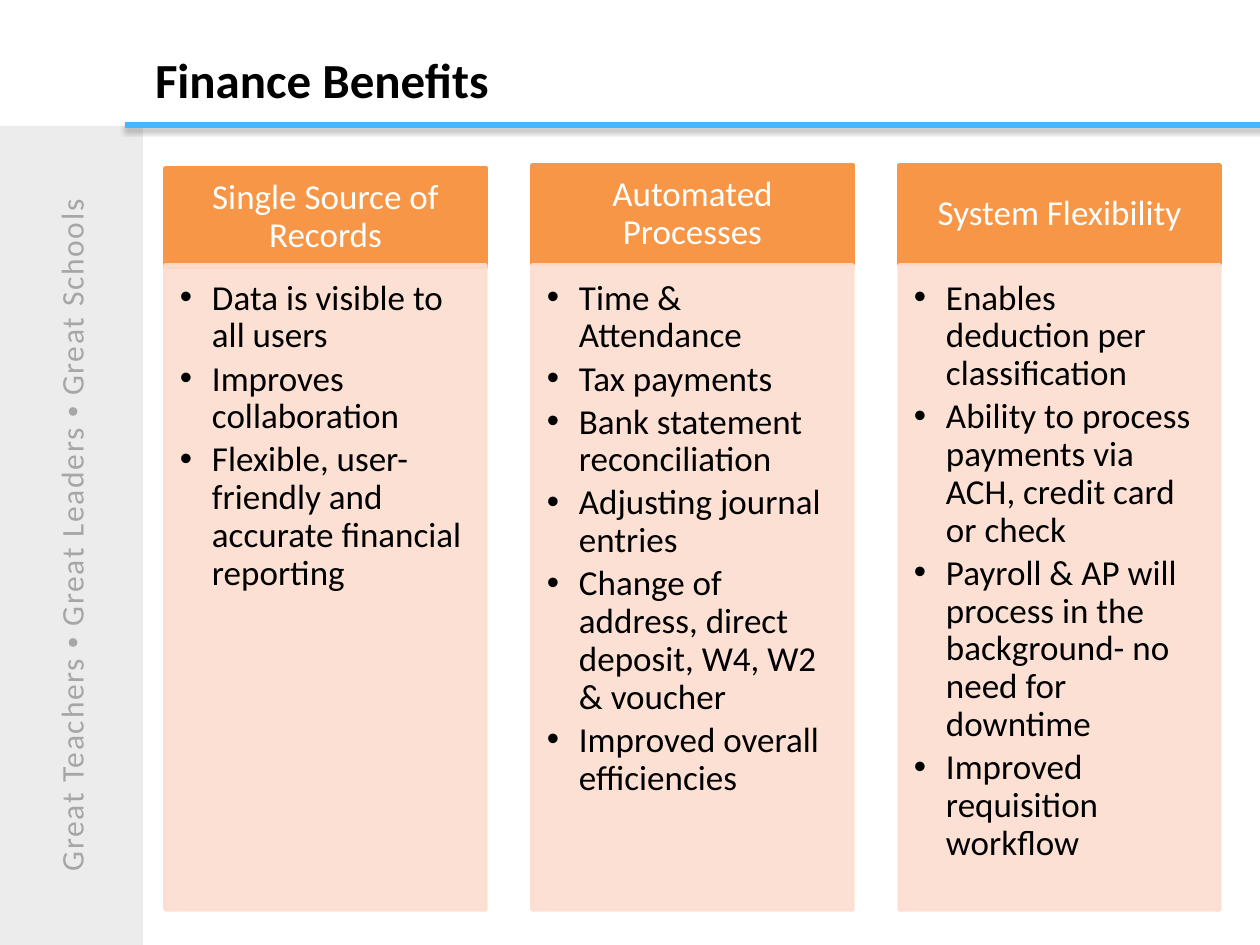
from dataclasses import dataclass

from lxml import etree
from pptx import Presentation
from pptx.dml.color import RGBColor
from pptx.enum.shapes import MSO_CONNECTOR, MSO_SHAPE
from pptx.enum.text import MSO_ANCHOR, PP_ALIGN
from pptx.oxml.ns import qn
from pptx.util import Pt

RECTANGLE = MSO_SHAPE.RECTANGLE
STRAIGHT = MSO_CONNECTOR.STRAIGHT
TOP, MIDDLE = MSO_ANCHOR.TOP, MSO_ANCHOR.MIDDLE
LEFT, CENTER = PP_ALIGN.LEFT, PP_ALIGN.CENTER

# Content
TITLE = "Finance Benefits"
MOTTO = ["Great Teachers ", "•", " Great Leaders ", "•", " Great Schools"]
COLUMNS = [
    ("Single Source of Records", [
        "Data is visible to all users",
        "Improves collaboration",
        "Flexible, user-friendly and accurate financial reporting",
    ]),
    ("Automated Processes", [
        "Time & Attendance",
        "Tax payments",
        "Bank statement reconciliation",
        "Adjusting journal entries",
        "Change of address, direct deposit, W4, W2 & voucher",
        "Improved overall efficiencies",
    ]),
    ("System Flexibility", [
        "Enables deduction per classification",
        "Ability to process payments via ACH, credit card or check",
        "Payroll & AP will process in the background- no need for downtime",
        "Improved requisition workflow",
    ]),
]


@dataclass(frozen=True)
class Theme:
    font: str = "Calibri"
    bullet_font: str = "Arial"
    text: str = "000000"
    header_text: str = "FFFFFF"
    header: str = "F79646"
    body: str = "FCDDCF"
    band: str = "D9D9D9"
    motto: str = "A6A6A6"
    rule: str = "49B4FF"
    title_size: int = 28
    text_size: int = 20
    motto_size: int = 18


THEME = Theme()

# Layout in px
PAGE_WIDTH, PAGE_HEIGHT = 1260, 945
RULE_LEFT, RULE_RIGHT, RULE_Y = 125, 1266, 125
COLUMN_LEFT, COLUMN_PITCH, COLUMN_WIDTH = 165, 367, 321
HEADER_TOPS = [168, 165, 165]
HEADER_HEIGHT = 99
BODY_TOP, BODY_HEIGHT = 265, 645
HEADER_INSETS = (20, 11, 20, 11)
BODY_INSETS = (15, 15, 20, 21)
BULLET_INDENT = 32


def px(value):
    return round(value * 914400 / 126)


def color(value):
    return RGBColor.from_string(value)


def add_child(parent, tag, **attributes):
    return etree.SubElement(parent, qn(tag), attributes)


def style(font, size, value, bold=False, name=THEME.font):
    font.name, font.size, font.bold = name, Pt(size), bold
    font.color.rgb = color(value)


def set_alpha(fill_parent, percent):
    for element in fill_parent.iter(qn("a:srgbClr")):
        add_child(element, "a:alpha", val=str(percent * 1000))


def add_panel(page, left, top, width, height, fill, line=None, alpha=None):
    panel = page.shapes.add_shape(RECTANGLE, px(left), px(top), px(width), px(height))
    panel.shadow.inherit = False
    panel.fill.solid()
    panel.fill.fore_color.rgb = color(fill)
    if line:
        panel.line.color.rgb = color(line)
        panel.line.width = Pt(2)
    else:
        panel.line.fill.background()
    if alpha:
        set_alpha(panel._element.spPr, alpha)
    return panel


def set_frame(shape, anchor, insets):
    frame = shape.text_frame
    frame.word_wrap = True
    frame.vertical_anchor = anchor
    (frame.margin_left, frame.margin_top,
     frame.margin_right, frame.margin_bottom) = map(px, insets)
    return frame


def add_bullet(para):
    properties = para._p.get_or_add_pPr()
    properties.set("marL", str(px(BULLET_INDENT)))
    properties.set("indent", str(-px(BULLET_INDENT)))
    add_child(properties, "a:buFont", typeface=THEME.bullet_font)
    add_child(properties, "a:buChar", char="•")


def add_column(page, left, header_top, heading, items):
    header = add_panel(page, left, header_top, COLUMN_WIDTH, HEADER_HEIGHT,
                       THEME.header, THEME.header)
    frame = set_frame(header, MIDDLE, HEADER_INSETS)
    frame.text = heading
    para = frame.paragraphs[0]
    para.alignment, para.line_spacing = CENTER, 0.9
    style(para.runs[0].font, THEME.text_size, THEME.header_text)

    body = add_panel(page, left, BODY_TOP, COLUMN_WIDTH, BODY_HEIGHT,
                     THEME.body, THEME.body, 90)
    frame = set_frame(body, TOP, BODY_INSETS)
    frame.text = "\n".join(items)
    for para in frame.paragraphs:
        para.alignment, para.line_spacing, para.space_after = LEFT, 0.9, Pt(3)
        add_bullet(para)
        style(para.runs[0].font, THEME.text_size, THEME.text)


def add_motto_band(page):
    band = add_panel(page, -1, 126, 144, 819, THEME.band, alpha=49)
    frame = set_frame(band, MIDDLE, (13, 6, 13, 6))
    frame._txBody.bodyPr.set("vert", "vert270")
    para = frame.paragraphs[0]
    para.alignment = CENTER
    for text in MOTTO:
        span = para.add_run()
        span.text = text
        name = THEME.bullet_font if text == "•" else THEME.font
        style(span.font, THEME.motto_size, THEME.motto, name=name)
        span._r.get_or_add_rPr().set("spc", "100")


def add_rule(page):
    rule = page.shapes.add_connector(STRAIGHT, px(RULE_RIGHT), px(RULE_Y),
                                     px(RULE_LEFT), px(RULE_Y))
    rule.line.color.rgb = color(THEME.rule)
    rule.line.width = Pt(3)
    effects = add_child(rule._element.spPr, "a:effectLst")
    shadow = add_child(effects, "a:outerShdw", blurRad=str(Pt(3.1)), dist=str(Pt(1.8)),
                       dir="5400000", rotWithShape="0")
    add_child(shadow, "a:srgbClr", val="000000")
    set_alpha(shadow, 35)


def add_title(page):
    box = page.shapes.add_textbox(px(142), px(19), px(979), px(120))
    frame = set_frame(box, MIDDLE, (13, 6, 13, 6))
    frame.text = TITLE
    style(frame.paragraphs[0].runs[0].font, THEME.title_size, THEME.text, bold=True)


def main():
    deck = Presentation()
    deck.slide_width, deck.slide_height = px(PAGE_WIDTH), px(PAGE_HEIGHT)
    page = deck.slides.add_slide(deck.slide_layouts[6])
    add_motto_band(page)
    add_rule(page)
    for index, (heading, items) in enumerate(COLUMNS):
        add_column(page, COLUMN_LEFT + index * COLUMN_PITCH, HEADER_TOPS[index],
                   heading, items)
    add_title(page)
    deck.save("out.pptx")


if __name__ == "__main__":
    main()
